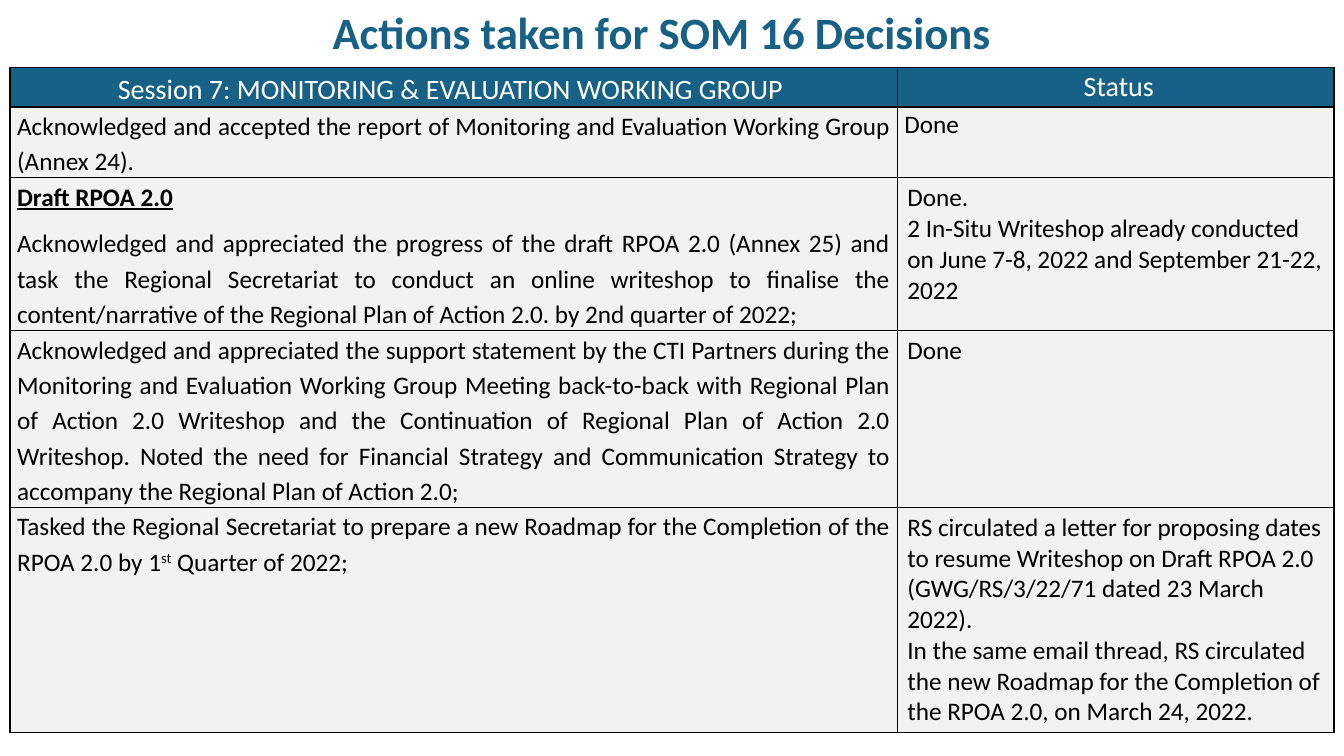
from dataclasses import dataclass

from lxml.etree import SubElement
from pptx import Presentation
from pptx.dml.color import RGBColor as RGB
from pptx.enum.text import MSO_ANCHOR as ANCHOR, MSO_AUTO_SIZE as AUTO, PP_ALIGN as ALIGN
from pptx.oxml.ns import qn
from pptx.util import Inches, Pt


@dataclass(frozen=True)
class Theme:
    font: str = "Calibri"
    blue: str = "176186"
    white: str = "FFFFFF"
    grey: str = "F2F2F2"
    black: str = "000000"
    title: int = 32
    header: int = 20
    body: int = 18


@dataclass(frozen=True)
class CellStyle:
    side: float
    top: float
    align: ALIGN
    spacing: float = 1.0
    header: bool = False


class Deck:
    def __init__(self, prs, theme):
        self.theme = theme
        self.s = prs.slides.add_slide(prs.slide_layouts[5])

    def font(self, r, size, color, bold=False):
        r.font.name = self.theme.font
        r.font.size = Pt(size)
        r.font.bold = bold
        r.font.color.rgb = RGB.from_string(color)

    def title(self, text, left, top, width, height):
        sp = self.s.shapes.title
        sp.left, sp.top, sp.width, sp.height = map(Inches, (left, top, width, height))
        tf = sp.text_frame
        tf.text = text
        tf.word_wrap = True
        tf.auto_size = AUTO.NONE
        tf.vertical_anchor = ANCHOR.TOP
        p = tf.paragraphs[0]
        p.alignment = ALIGN.CENTER
        self.font(p.runs[0], self.theme.title, self.theme.blue, True)

    def borders(self, cell):
        tc_pr = cell._tc.get_or_add_tcPr()
        for side in ("a:lnL", "a:lnR", "a:lnT", "a:lnB"):
            ln = SubElement(tc_pr, qn(side), w=str(Pt(1)))
            fill = SubElement(ln, qn("a:solidFill"))
            SubElement(fill, qn("a:srgbClr"), val=self.theme.black)

    def cell(self, cell, paragraphs, style):
        t = self.theme
        self.borders(cell)
        cell.fill.solid()
        cell.fill.fore_color.rgb = RGB.from_string(t.blue if style.header else t.grey)
        cell.margin_left = cell.margin_right = Inches(style.side)
        cell.margin_top = cell.margin_bottom = Inches(style.top)
        cell.vertical_anchor = ANCHOR.MIDDLE if style.header else ANCHOR.TOP
        tf = cell.text_frame
        for i, text in enumerate(paragraphs):
            p = tf.add_paragraph() if i else tf.paragraphs[0]
            p.alignment = style.align
            p.line_spacing = style.spacing
            for j, piece in enumerate(text.split("^")):
                r = p.add_run()
                r.text = piece
                self.font(r, t.header if style.header else t.body,
                          t.white if style.header else t.black)
                if j % 2:
                    r._r.get_or_add_rPr().set("baseline", "30000")

    def table(self, rows, styles, left, top, widths, heights):
        frame = self.s.shapes.add_table(len(rows), len(widths), Inches(left), Inches(top),
                                        Inches(sum(widths)), Inches(sum(heights)))
        table = frame.table
        table.first_row = table.horz_banding = False
        for column, width in zip(table.columns, widths):
            column.width = Inches(width)
        for i, (row, height) in enumerate(zip(rows, heights)):
            table.rows[i].height = Inches(height)
            for j, paragraphs in enumerate(row):
                self.cell(table.cell(i, j), paragraphs, styles[i][j])
        return table


DECISIONS = [
    (["Session 7: MONITORING & EVALUATION WORKING GROUP "], ["\u00a0Status".replace("\u00a0", " ")]),
    (["Acknowledged and accepted the report of Monitoring and Evaluation Working Group "
      "(Annex 24). "],
     ["Done"]),
    (["Draft RPOA 2.0",
      "Acknowledged and appreciated the progress of the draft RPOA 2.0 (Annex 25) and task the "
      "Regional Secretariat to conduct an online writeshop to finalise the content/narrative of "
      "the Regional Plan of Action 2.0. by 2nd quarter of 2022;"],
     ["Done.",
      "2 In-Situ Writeshop already conducted on June 7-8, 2022 and September 21-22, 2022"]),
    (["Acknowledged and appreciated the support statement by the CTI Partners during the "
      "Monitoring and Evaluation Working Group Meeting back-to-back with Regional Plan of Action "
      "2.0 Writeshop and the Continuation of Regional Plan of Action 2.0 Writeshop. Noted the "
      "need for Financial Strategy and Communication Strategy to accompany the Regional Plan of "
      "Action 2.0;"],
     ["Done"]),
    (["Tasked the Regional Secretariat to prepare a new Roadmap for the Completion of the RPOA "
      "2.0 by 1^st^ Quarter of 2022;"],
     ["RS circulated a letter for proposing dates to resume Writeshop on Draft RPOA 2.0 "
      "(GWG/RS/3/22/71 dated 23 March 2022).",
      "In the same email thread, RS circulated the new Roadmap for the Completion of the RPOA "
      "2.0, on March 24, 2022."]),
]


def main():
    prs = Presentation()
    prs.slide_width, prs.slide_height = Inches(13.33), Inches(7.5)
    deck = Deck(prs, Theme())
    deck.title("Actions taken for SOM 16 Decisions", 0.34, 0, 12.45, 0.64)

    session = CellStyle(0.2, 0, ALIGN.CENTER, 1.15, True)
    status = CellStyle(0.2, 0, ALIGN.CENTER, 1.0, True)
    decision = CellStyle(0.07, 0, ALIGN.JUSTIFY, 1.15)
    done = CellStyle(0.07, 0, ALIGN.JUSTIFY, 1.07)
    action = CellStyle(0.1, 0.05, ALIGN.LEFT)
    styles = [(session, status), (decision, done)] + [(decision, action)] * 3
    table = deck.table(DECISIONS, styles, 0.1, 0.67, (8.8, 4.33), (0.38, 0.42, 0.77, 0.86, 1.02))

    heading, progress = table.cell(2, 0).text_frame.paragraphs
    heading.runs[0].font.bold = heading.runs[0].font.underline = True
    progress.space_before = Pt(8)
    prs.save("out.pptx")


if __name__ == "__main__":
    main()
